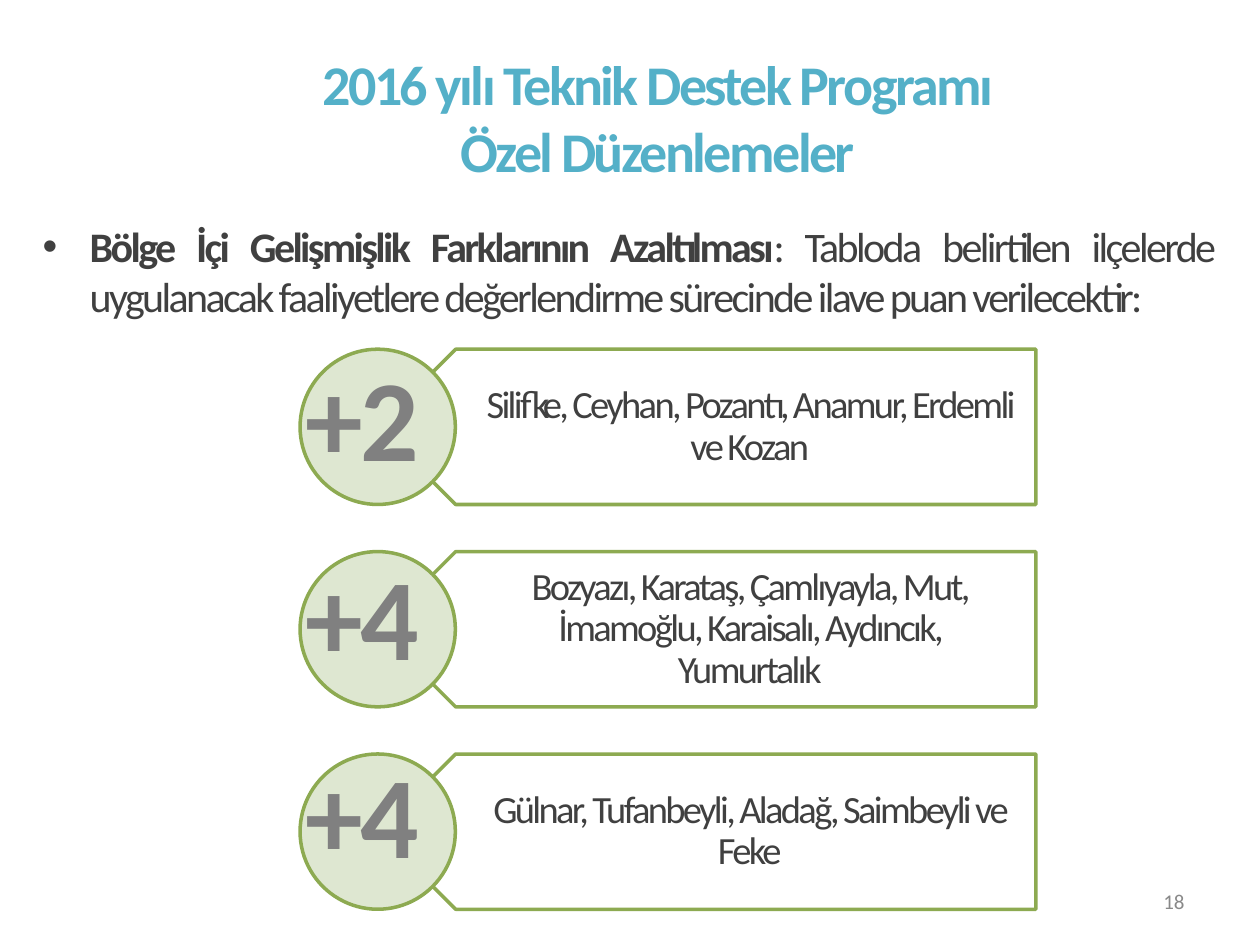
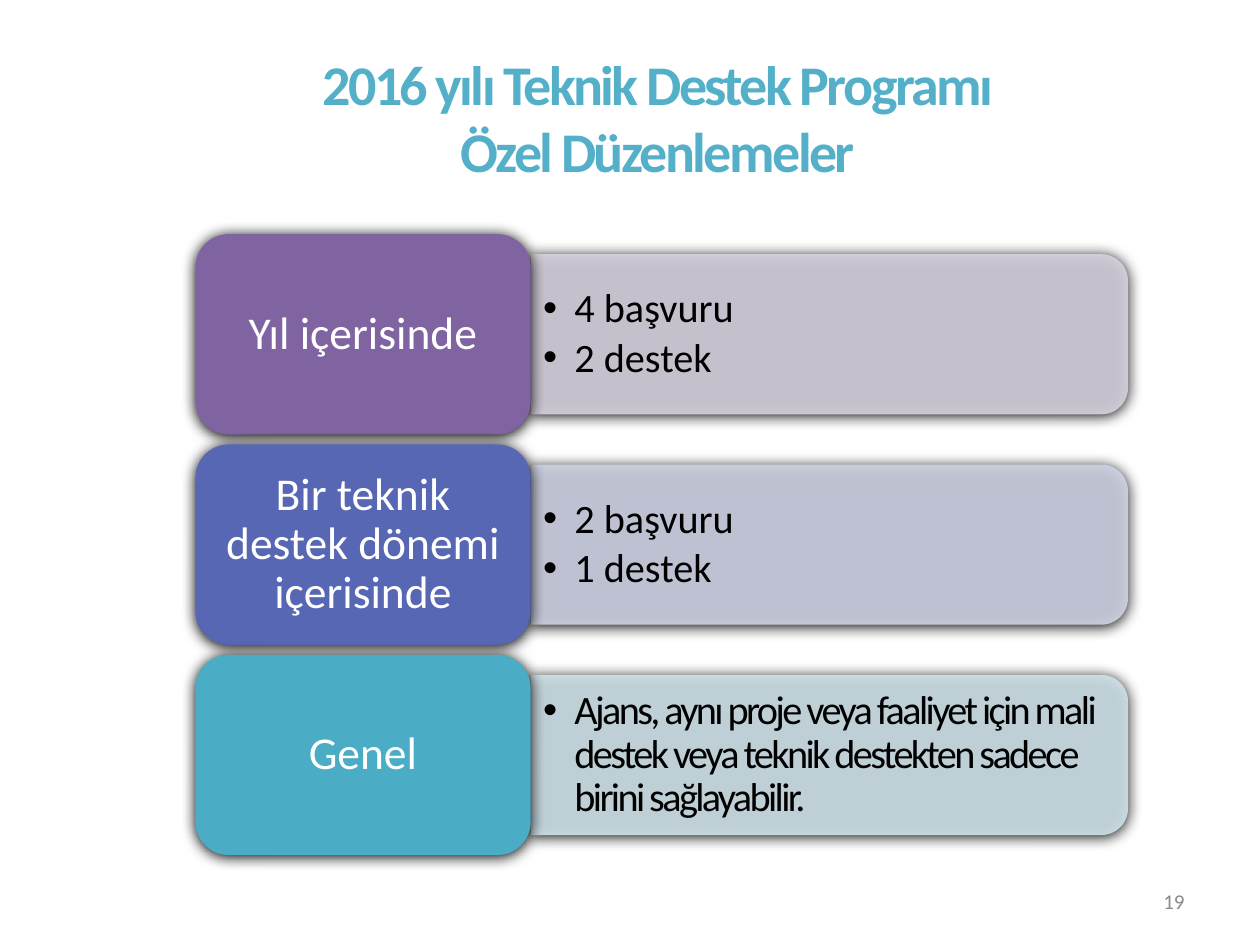
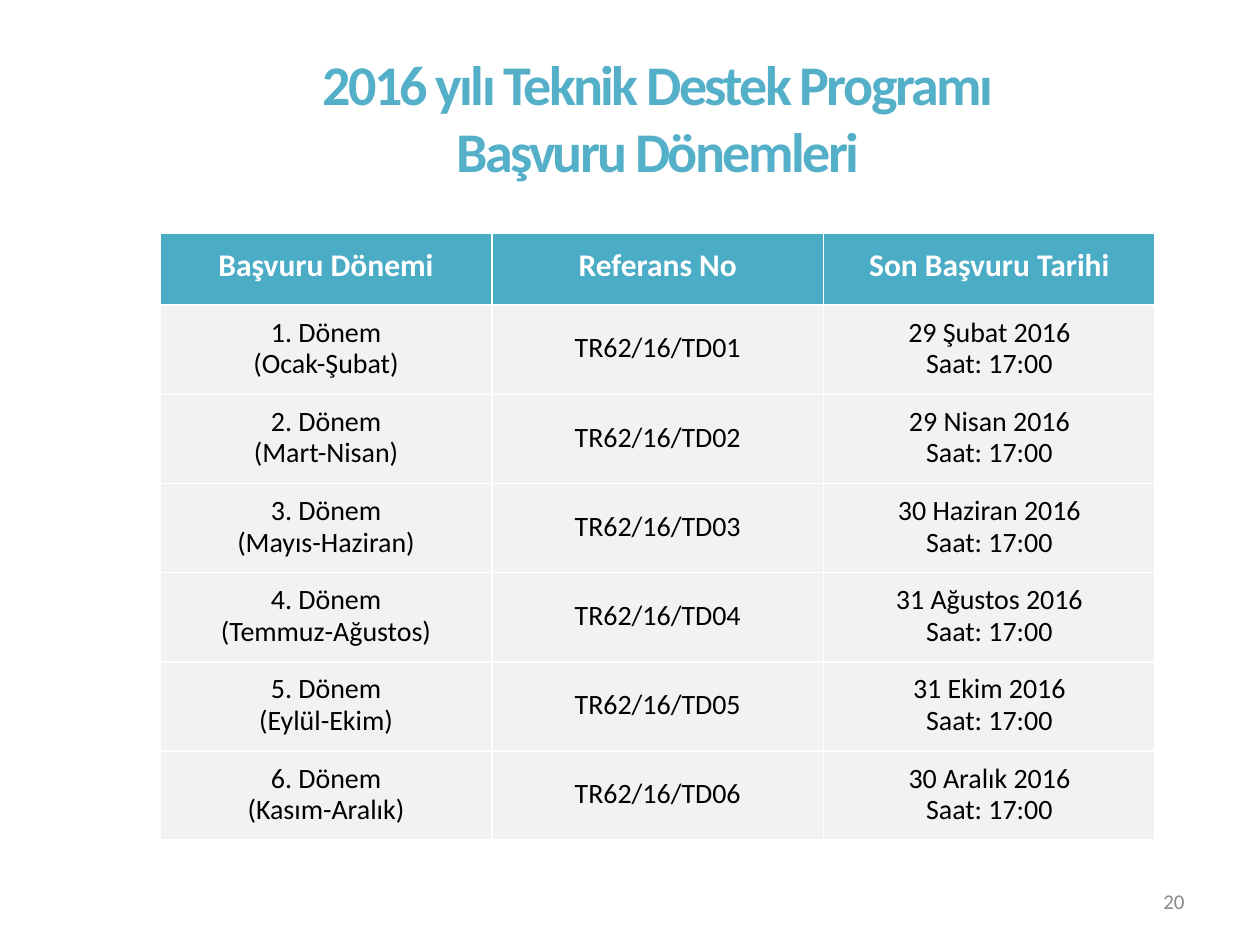
from lxml import etree
from pptx import Presentation
from pptx.dml.color import RGBColor
from pptx.enum.shapes import MSO_SHAPE
from pptx.enum.text import MSO_ANCHOR, PP_ALIGN
from pptx.oxml.ns import qn
from pptx.util import Cm, Pt

MIDDLE = MSO_ANCHOR.MIDDLE
CENTER, RIGHT, JUSTIFY = PP_ALIGN.CENTER, PP_ALIGN.RIGHT, PP_ALIGN.JUSTIFY
PENTAGON, OVAL = MSO_SHAPE.PENTAGON, MSO_SHAPE.OVAL
ROUNDED, ROUNDED_TOP = MSO_SHAPE.ROUNDED_RECTANGLE, MSO_SHAPE.ROUND_2_SAME_RECTANGLE

COLORS = {
    "white": "FFFFFF", "black": "000000", "text": "404040", "points": "808080",
    "number": "898989", "teal": "4BACC6", "purple": "8064A2", "indigo": "5767B4",
    "pale teal": "D0E3EA", "pale purple": "D8D3E0", "pale indigo": "D1D4E5",
    "green": "8DAA51", "pale green": "DEE7D1", "row": "F2F2F2",
}


def insets(side, end, right=None):
    """Return the frame margins in centimetres."""
    return {"margin_left": Cm(side), "margin_right": Cm(side if right is None else right),
            "margin_top": Cm(end), "margin_bottom": Cm(end)}


CELL = {
    "frame": {"vertical_anchor": MIDDLE, **insets(0.18, 0)},
    "paragraph": {"alignment": CENTER, "line_spacing": Pt(18)},
}
STYLES = {
    "title": {
        "color": "teal", "alpha": 95, "tracking": -1.5,
        "font": {"size": Pt(32), "bold": True},
        "paragraph": {"alignment": CENTER},
        "frame": {"vertical_anchor": MIDDLE},
    },
    "number": {
        "color": "number", "font": {"size": Pt(12)},
        "paragraph": {"alignment": RIGHT},
        "frame": {"vertical_anchor": MIDDLE},
    },
    "intro": {
        "color": "text", "tracking": -1.5, "bullet": 0.95,
        "font": {"size": Pt(24)}, "paragraph": {"alignment": JUSTIFY},
    },
    "districts": {
        "color": "text", "tracking": -1.5, "font": {"size": Pt(22)},
        "paragraph": {"alignment": CENTER, "line_spacing": 0.9},
        "frame": {"vertical_anchor": MIDDLE, **insets(1.37, 0.23, 0.43)},
    },
    "points": {
        "color": "points", "tracking": -1.5,
        "font": {"size": Pt(66), "bold": True},
        "paragraph": {"alignment": CENTER},
    },
    "scope": {
        "color": "white", "font": {"size": Pt(26)},
        "paragraph": {"alignment": CENTER, "line_spacing": 0.9},
        "frame": {"vertical_anchor": MIDDLE, **insets(0.28, 0.13)},
    },
    "limits": {
        "color": "black", "bullet": 0.63, "font": {"size": Pt(23)},
        "paragraph": {"line_spacing": 0.9, "space_after": Pt(3.5)},
        "frame": {"vertical_anchor": MIDDLE},
    },
    "header cell": {**CELL, "color": "white", "font": {"size": Pt(18), "bold": True}},
    "body cell": {**CELL, "color": "black", "font": {"size": Pt(16), "bold": False}},
}
STYLES["tight limits"] = {**STYLES["limits"], "tracking": -1.5}

PROGRAM = "2016 yılı Teknik Destek Programı"
SPECIAL_RULES = "Özel Düzenlemeler"
INTRO = [[
    ("Bölge İçi Gelişmişlik Farklarının Azaltılması", {"bold": True}),
    (": Tabloda belirtilen ilçelerde uygulanacak faaliyetlere değerlendirme "
     "sürecinde ilave puan verilecektir:", {}),
]]
BONUSES = [
    ("+2", "Silifke, Ceyhan, Pozantı, Anamur, Erdemli ve Kozan"),
    ("+4", "Bozyazı, Karataş, Çamlıyayla, Mut, İmamoğlu, Karaisalı, Aydıncık, Yumurtalık"),
    ("+4", "Gülnar, Tufanbeyli, Aladağ, Saimbeyli ve Feke"),
]
LIMITS = [
    ("purple", "Yıl içerisinde", ["4 başvuru", "2 destek"], "limits"),
    ("indigo", "Bir teknik destek dönemi içerisinde", ["2 başvuru", "1 destek"], "limits"),
    ("teal", "Genel", ["Ajans, aynı proje veya faaliyet için mali destek veya teknik "
                       "destekten sadece birini sağlayabilir."], "tight limits"),
]
HEADINGS = ["Başvuru Dönemi", "Referans No", "Son Başvuru Tarihi"]
PERIODS = [
    ("Ocak-Şubat", "29 Şubat"), ("Mart-Nisan", "29 Nisan"),
    ("Mayıs-Haziran", "30 Haziran"), ("Temmuz-Ağustos", "31 Ağustos"),
    ("Eylül-Ekim", "31 Ekim"), ("Kasım-Aralık", "30 Aralık"),
]


def apply(target, values):
    """Set every attribute in values on target."""
    for name, value in values.items():
        setattr(target, name, value)


def add_alpha(element, percent):
    """Make the colours inside an element partly transparent."""
    for color in element.iter(qn("a:srgbClr")):
        etree.SubElement(color, qn("a:alpha"), val=str(percent * 1000))


class Deck:
    """Hold the presentation, its style and the current slide."""

    def __init__(self, first_number):
        """Open an empty 4:3 presentation."""
        self.presentation = Presentation()
        self.presentation.slide_width, self.presentation.slide_height = Cm(25.4), Cm(19.05)
        self.number = first_number
        self.slide = None

    def color(self, name):
        """Return a named colour."""
        return RGBColor.from_string(COLORS[name])

    def new_slide(self, subject):
        """Start a slide with its title and number."""
        self.slide = self.presentation.slides.add_slide(self.presentation.slide_layouts[6])
        self.text((18.21, 17.65, 5.92, 1.02), [str(self.number)], "number")
        self.text((1.83, 0.76, 22.86, 3.18), [PROGRAM, subject], "title")
        self.number += 1

    def fill_frame(self, frame, paragraphs, style):
        """Fill a text frame with styled paragraphs."""
        look = STYLES[style]
        for index, content in enumerate(paragraphs):
            paragraph = frame.add_paragraph() if index else frame.paragraphs[0]
            if "bullet" in look:
                self.bullet(paragraph, look["bullet"])
            apply(paragraph, look.get("paragraph", {}))
            for words, changes in [(content, {})] if isinstance(content, str) else content:
                run = paragraph.add_run()
                run.text = words
                apply(run.font, {"name": "Calibri", **look["font"], **changes})
                run.font.color.rgb = self.color(look["color"])
                properties = run._r.get_or_add_rPr()
                if "tracking" in look:
                    properties.set("spc", str(int(look["tracking"] * 100)))
                if "alpha" in look:
                    add_alpha(properties, look["alpha"])

    def bullet(self, paragraph, indent):
        """Give a paragraph a hanging bullet."""
        properties = paragraph._p.get_or_add_pPr()
        properties.set("marL", str(Cm(indent)))
        properties.set("indent", str(-Cm(indent)))
        etree.SubElement(properties, qn("a:buFont"), typeface="Arial")
        etree.SubElement(properties, qn("a:buChar"), char="•")

    def text(self, box, paragraphs, style):
        """Add a wrapping text box."""
        frame = self.slide.shapes.add_textbox(*map(Cm, box)).text_frame
        apply(frame, {"word_wrap": True, **STYLES[style].get("frame", {})})
        self.fill_frame(frame, paragraphs, style)

    def shape(self, kind, box, fill, line=None, rotation=0, alpha=None, shadow=False):
        """Add a preset shape that covers the box after rotation."""
        left, top, width, height = box
        if rotation == 90:
            left, top = left + (width - height) / 2, top + (height - width) / 2
            width, height = height, width
        shape = self.slide.shapes.add_shape(kind, *map(Cm, (left, top, width, height)))
        shape.rotation = rotation
        shape.shadow.inherit = False
        shape.fill.solid()
        shape.fill.fore_color.rgb = self.color(fill)
        if alpha:
            add_alpha(shape._element.spPr, alpha)
        if line:
            shape.line.color.rgb = self.color(line)
            shape.line.width = Pt(2)
        else:
            shape.line.fill.background()
        if shadow:
            self.shadow(shape)
        return shape

    def shadow(self, shape):
        """Add a soft black shadow just below a shape."""
        effects = shape._element.spPr.find(qn("a:effectLst"))
        outer = etree.SubElement(effects, qn("a:outerShdw"), blurRad=str(Pt(8.5)),
                                 dist=str(Pt(1)), dir="5400000", rotWithShape="0")
        etree.SubElement(outer, qn("a:srgbClr"), val=COLORS["black"])

    def label(self, box, fill, words, style):
        """Add a rounded, shadowed block with text."""
        frame = self.shape(ROUNDED, box, fill, shadow=True).text_frame
        apply(frame, {"word_wrap": True, **STYLES[style]["frame"]})
        self.fill_frame(frame, [words], style)

    def table(self, box, rows, header_height):
        """Add a table with a coloured header row."""
        table = self.slide.shapes.add_table(len(rows), len(rows[0]), *map(Cm, box)).table
        table.horz_banding = False
        row_height = (box[3] - header_height) / (len(rows) - 1)
        for r, row in enumerate(rows):
            table.rows[r].height = Cm(row_height if r else header_height)
            style, fill = ("body cell", "row") if r else ("header cell", "teal")
            for c, lines in enumerate(row):
                cell = table.cell(r, c)
                cell.fill.solid()
                cell.fill.fore_color.rgb = self.color(fill)
                apply(cell, STYLES[style]["frame"])
                self.fill_frame(cell.text_frame, lines, style)


def add_bonuses(deck):
    """Show the extra points for each group of districts."""
    deck.new_slide(SPECIAL_RULES)
    deck.text((0.61, 4.32, 24.1, 3.33), INTRO, "intro")
    size = 3.13
    for index, (points, districts) in enumerate(BONUSES):
        top = 7.04 + 4.08 * index
        deck.shape(PENTAGON, (7.62, top, 13.26, size), "white", "green", rotation=180)
        deck.text((8.41, top, 12.47, size), [districts], "districts")
        deck.shape(OVAL, (6.05, top, size, size), "pale green", "green")
    for index, (points, districts) in enumerate(BONUSES):
        deck.text((4.25, 6.86 + 4 * index, 6.12, 3.07), [points], "points")


def add_limits(deck):
    """Show how many applications and grants are allowed."""
    deck.new_slide(SPECIAL_RULES)
    label_height, panel_height = 4.04, 3.23
    for index, (color, scope, limits, style) in enumerate(LIMITS):
        top = 4.72 + 4.24 * index
        panel_top = top + (label_height - panel_height) / 2
        deck.shape(ROUNDED_TOP, (10.7, panel_top, 12.04, panel_height), f"pale {color}",
                   rotation=90, alpha=90, shadow=True)
        deck.text((10.7, panel_top + 0.16, 11.88, 2.92), limits, style)
        deck.label((3.94, top, 6.76, label_height), color, scope, "scope")


def add_periods(deck):
    """List the application periods and deadlines."""
    deck.new_slide("Başvuru Dönemleri")
    rows = [[[heading] for heading in HEADINGS]]
    for index, (months, day) in enumerate(PERIODS, 1):
        rows.append([[f"{index}. Dönem", f"({months})"], [f"TR62/16/TD{index:02}"],
                     [f"{day} 2016", "Saat: 17:00"]])
    deck.table((3.23, 4.7, 20.06, 12.24), rows, 1.45)


def main():
    """Build and save the three slides."""
    deck = Deck(first_number=18)
    for add_content in (add_bonuses, add_limits, add_periods):
        add_content(deck)
    deck.presentation.save("out.pptx")


if __name__ == "__main__":
    main()
